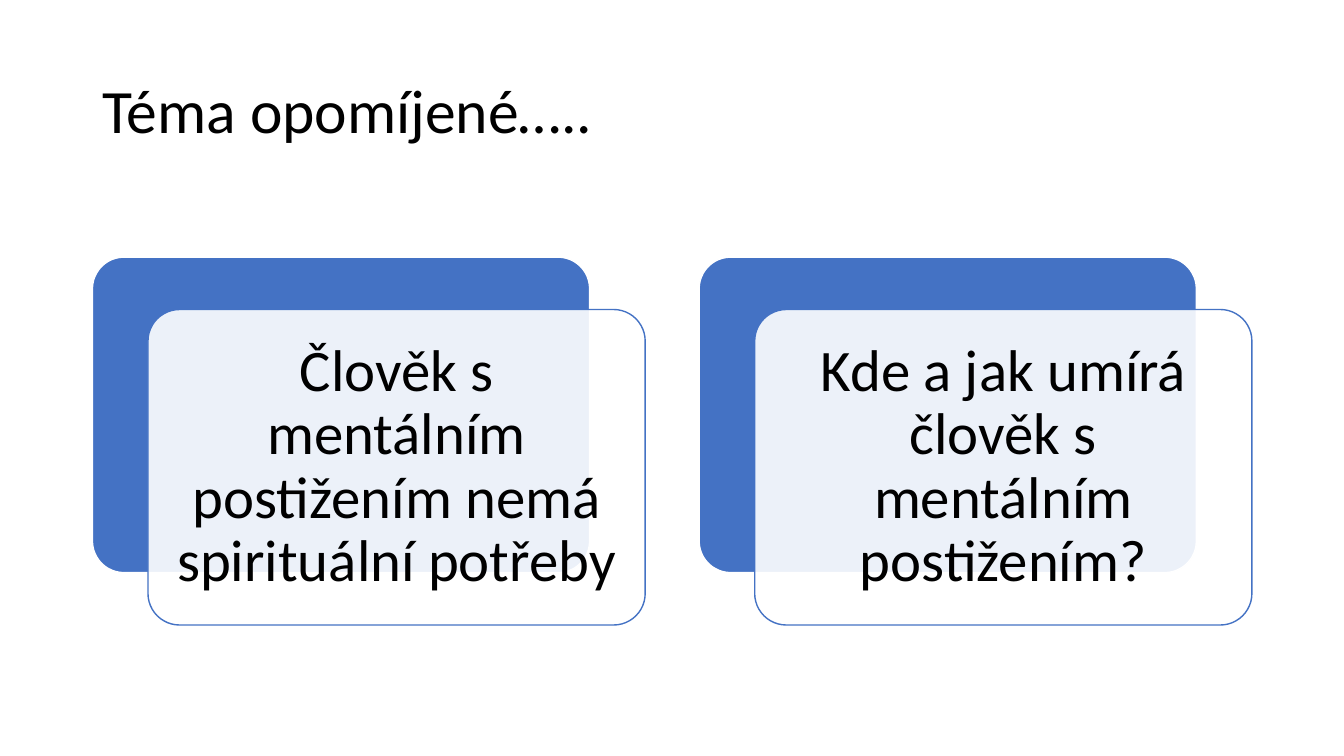
from lxml import etree
from pptx import Presentation
from pptx.dml.color import RGBColor
from pptx.enum import shapes, text
from pptx.oxml.ns import qn
from pptx.util import Cm, Pt

BLACK = RGBColor(0x00, 0x00, 0x00)
WHITE = RGBColor(0xFF, 0xFF, 0xFF)
BLUE = RGBColor(0x44, 0x72, 0xC4)

MARGIN = Cm(2.33)
CARD_TOP, CARD_PITCH = Cm(6.48), Cm(15.29)
CARD_W, CARD_H = Cm(13.93), Cm(9.27)
SHIFT_X, SHIFT_Y = Cm(1.4), Cm(1.32)
TEXT_GAP = Cm(0.23)

QUESTIONS = [
    "Člověk s mentálním postižením nemá spirituální potřeby",
    "Kde a jak umírá člověk s mentálním postižením?",
]


def add_text(slide, words, left, top, width, height, *, size,
             align=text.PP_ALIGN.LEFT, inset_x=Cm(0.25), inset_y=Cm(0.13)):
    tf = slide.shapes.add_textbox(left, top, width, height).text_frame
    tf.word_wrap = True
    tf.vertical_anchor = text.MSO_ANCHOR.MIDDLE
    tf.margin_left = tf.margin_right = inset_x
    tf.margin_top = tf.margin_bottom = inset_y
    p = tf.paragraphs[0]
    p.alignment = align
    p.line_spacing = 0.9
    r = p.add_run()
    r.text = words
    r.font.name = "Calibri"
    r.font.size = Pt(size)
    r.font.color.rgb = BLACK


def add_panel(slide, left, top, width, height, fill, line, opacity=100):
    sp = slide.shapes.add_shape(
        shapes.MSO_SHAPE.ROUNDED_RECTANGLE, left, top, width, height)
    sp.shadow.inherit = False
    sp.adjustments[0] = 0.1
    sp.fill.solid()
    sp.fill.fore_color.rgb = fill
    sp.line.color.rgb = line
    sp.line.width = Pt(1)
    if opacity < 100:
        color = sp.fill._xPr.find(qn("a:solidFill")).find(qn("a:srgbClr"))
        etree.SubElement(color, qn("a:alpha"), val=str(opacity * 1000))


def add_card(slide, words, left, top, width, height):
    """Place a blue panel with a translucent text panel shifted over it."""
    w, h = width - SHIFT_X, height - SHIFT_Y
    x, y = left + SHIFT_X, top + SHIFT_Y
    add_panel(slide, left, top, w, h, BLUE, WHITE)
    add_panel(slide, x, y, w, h, WHITE, BLUE, opacity=90)
    add_text(slide, words, x + TEXT_GAP, y + TEXT_GAP,
             w - 2 * TEXT_GAP, h - 2 * TEXT_GAP, size=42,
             align=text.PP_ALIGN.CENTER, inset_x=Cm(0.43), inset_y=Cm(0.43))


def main():
    prs = Presentation()
    prs.slide_width, prs.slide_height = Cm(33.87), Cm(19.05)
    slide = prs.slides.add_slide(prs.slide_layouts[6])
    add_text(slide, "Téma opomíjené…..", MARGIN, Cm(1.01), Cm(29.21), Cm(3.68),
             size=44)
    for i, question in enumerate(QUESTIONS):
        add_card(slide, question, MARGIN + i * CARD_PITCH, CARD_TOP,
                 CARD_W, CARD_H)
    prs.save("out.pptx")


if __name__ == "__main__":
    main()
